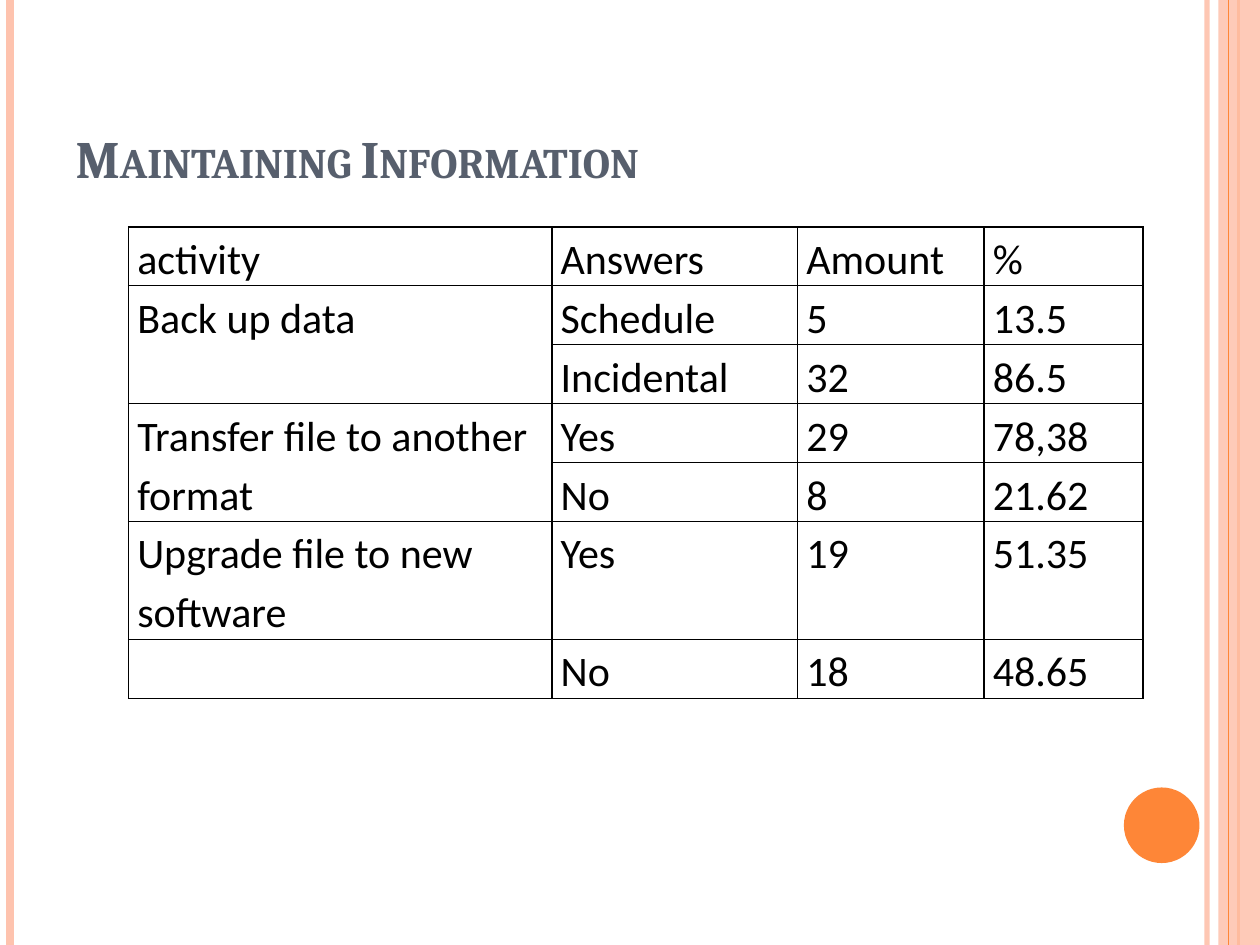
from dataclasses import dataclass

from lxml.etree import SubElement
from pptx import Presentation
from pptx.dml.color import RGBColor
from pptx.enum.shapes import MSO_CONNECTOR, MSO_SHAPE
from pptx.enum.text import MSO_ANCHOR, MSO_AUTO_SIZE, PP_ALIGN
from pptx.oxml import parse_xml
from pptx.oxml.ns import nsdecls, qn
from pptx.slide import Slide
from pptx.table import _Cell
from pptx.util import Inches, Pt

PEACH, ORANGE, SLATE, BLACK = "FEC3AE", "FE8637", "575F6D", "000000"
COL_WIDTHS = (3.36, 1.95, 1.48, 1.26)
ROW_HEIGHT = 0.468
ROWS = (
    ("activity", "Answers", "Amount", "%"),
    ("Back up data", "Schedule", "5", "13.5"),
    ("", "Incidental", "32", "86.5"),
    ("Transfer file to another format", "Yes", "29", "78,38"),
    ("", "No", "8", "21.62"),
    ("Upgrade file to new software", "Yes", "19", "51.35"),
    ("", "No", "18", "48.65"),
)
MERGED_STARTS = (1, 3)
TALL_ROW = 5
CELL_FORMAT = {
    "margin_left": Inches(0.07),
    "margin_right": Inches(0.07),
    "margin_top": 0,
    "margin_bottom": 0,
    "vertical_anchor": MSO_ANCHOR.TOP,
}


@dataclass
class Stripe:
    x: float
    color: str
    width: float
    alpha: int = 100


@dataclass
class Block:
    kind: MSO_SHAPE
    box: tuple[float, float, float, float]
    color: str
    alpha: int = 100


DECOR = (
    Stripe(9.58, PEACH, 3, 93),
    Stripe(0.08, PEACH, 4.5),
    Stripe(9.83, ORANGE, 1.5),
    Block(MSO_SHAPE.RECTANGLE, (9.67, 0, 0.33, 7.5), PEACH, 87),
    Stripe(9.75, ORANGE, 0.75),
    Block(MSO_SHAPE.OVAL, (8.92, 6.25, 0.6, 0.6), ORANGE),
)


def rgb(value: str) -> RGBColor:
    return RGBColor.from_string(value)


def apply(target: object, values: dict) -> None:
    for name, value in values.items():
        setattr(target, name, value)


def set_alpha(sp_pr, alpha: int) -> None:
    if alpha < 100:
        clr = next(sp_pr.iter(qn("a:srgbClr")))
        SubElement(clr, qn("a:alpha"), val=str(alpha * 1000))


def draw_stripe(s: Slide, stripe: Stripe) -> None:
    x = Inches(stripe.x)
    cn = s.shapes.add_connector(MSO_CONNECTOR.STRAIGHT, x, 0, x, Inches(7.5))
    cn.line.color.rgb = rgb(stripe.color)
    cn.line.width = Pt(stripe.width)
    sp_pr = cn.line._ln.getparent()
    set_alpha(sp_pr, stripe.alpha)
    SubElement(sp_pr, qn("a:effectLst"))


def draw_block(s: Slide, block: Block) -> None:
    sp = s.shapes.add_shape(block.kind, *map(Inches, block.box))
    sp.shadow.inherit = False
    sp.fill.solid()
    sp.fill.fore_color.rgb = rgb(block.color)
    sp.line.fill.background()
    set_alpha(sp._element.spPr, block.alpha)


def draw_title(s: Slide, text: str) -> None:
    sp = s.shapes.title
    box = zip(("left", "top", "width", "height"), map(Inches, (0.5, 0.3, 8.17, 1.25)))
    apply(sp, dict(box))
    tf = sp.text_frame
    apply(tf, {"text": text, "vertical_anchor": MSO_ANCHOR.BOTTOM,
               "auto_size": MSO_AUTO_SIZE.NONE, "word_wrap": True})
    p = tf.paragraphs[0]
    p.alignment = PP_ALIGN.LEFT
    r = p.runs[0]
    apply(r.font, {"name": "Cambria", "size": Pt(30), "bold": True})
    r.font.color.rgb = rgb(SLATE)
    r.font._element.set("cap", "small")


def format_cell(cell: _Cell, text: str) -> None:
    apply(cell, CELL_FORMAT)
    tc_pr = cell._tc.get_or_add_tcPr()
    for side in ("lnL", "lnR", "lnT", "lnB"):
        tc_pr.append(parse_xml(
            f'<a:{side} {nsdecls("a")} w="{Pt(1)}"><a:solidFill>'
            f'<a:srgbClr val="{BLACK}"/></a:solidFill></a:{side}>'))
    cell.fill.background()
    if text:
        p = cell.text_frame.paragraphs[0]
        p.line_spacing = 1.15
        r = p.add_run()
        r.text = text
        apply(r.font, {"name": "Calibri", "size": Pt(24), "bold": False})
        r.font.color.rgb = rgb(BLACK)


def draw_table(s: Slide) -> None:
    heights = [ROW_HEIGHT * (2 if i == TALL_ROW else 1) for i in range(len(ROWS))]
    size = (sum(COL_WIDTHS), sum(heights))
    frame = s.shapes.add_table(len(ROWS), len(COL_WIDTHS),
                               *map(Inches, (1.02, 1.8, *size)))
    table = frame.table
    apply(table, {"first_row": False, "horz_banding": False})
    for col, width in zip(table.columns, COL_WIDTHS):
        col.width = Inches(width)
    for i, (row, height) in enumerate(zip(table.rows, heights)):
        row.height = Inches(height)
        for cell, text in zip(row.cells, ROWS[i]):
            format_cell(cell, text)
    for start in MERGED_STARTS:
        table.cell(start, 0).merge(table.cell(start + 1, 0))


def main() -> None:
    """Build the slide with its side decoration, title and survey table."""
    prs = Presentation()
    apply(prs, {"slide_width": Inches(10), "slide_height": Inches(7.5)})
    s = prs.slides.add_slide(prs.slide_layouts[5])
    for item in DECOR:
        if isinstance(item, Stripe):
            draw_stripe(s, item)
        else:
            draw_block(s, item)
    draw_title(s, "Maintaining Information")
    draw_table(s)
    prs.save("out.pptx")


if __name__ == "__main__":
    main()
